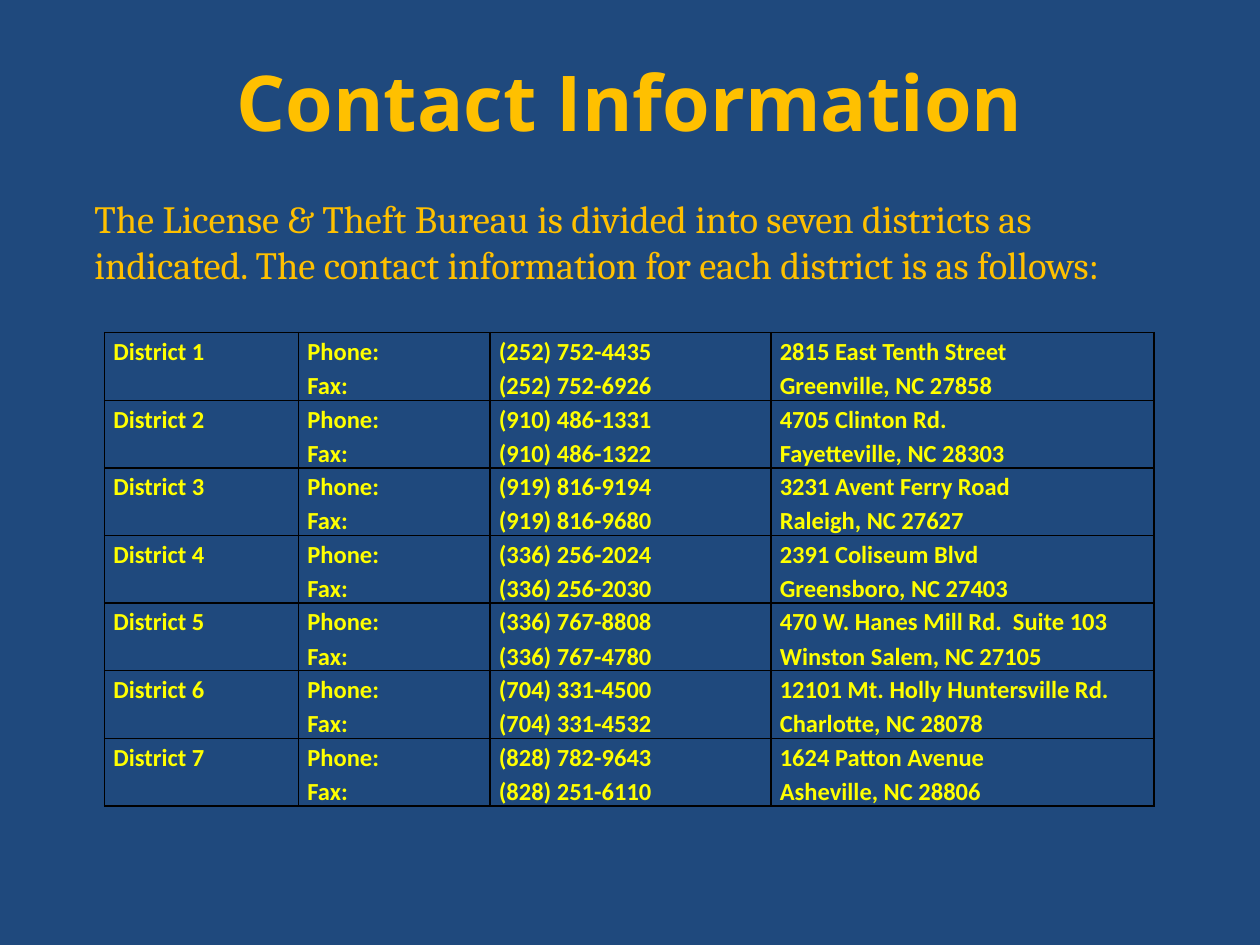
from lxml.etree import SubElement as Sub
from pptx import Presentation as Deck
from pptx.dml.color import RGBColor as Rgb
from pptx.enum.text import MSO_ANCHOR as Anchor, PP_ALIGN as Align
from pptx.oxml.ns import qn
from pptx.util import Inches, Pt

WIDE, HIGH = Inches(10), Inches(7.5)
NAVY, GOLD, LEMON, BLACK = "1F497D", "FFC000", "FFFF00", "000000"
COLS = (1.54, 1.52, 2.23, 3.04)
ROWS = (
    ("(252) 752-4435", "(252) 752-6926", "2815 East Tenth Street", "Greenville, NC 27858"),
    ("(910) 486-1331", "(910) 486-1322", "4705 Clinton Rd.", "Fayetteville, NC 28303"),
    ("(919) 816-9194", "(919) 816-9680", "3231 Avent Ferry Road", "Raleigh, NC 27627"),
    ("(336) 256-2024", "(336) 256-2030", "2391 Coliseum Blvd", "Greensboro, NC 27403"),
    ("(336) 767-8808", "(336) 767-4780", "470 W. Hanes Mill Rd.  Suite 103",
     "Winston Salem, NC 27105"),
    ("(704) 331-4500", "(704) 331-4532",
     "12101 Mt. Holly Huntersville Rd. Charlotte, NC 28078"),
    ("(828) 782-9643", "(828) 251-6110", "1624 Patton Avenue", "Asheville, NC 28806"),
)


def paint(part, hue):
    """Give a fill or a font colour a hex colour."""
    part.rgb = Rgb.from_string(hue)


def write(para, text, face, size, hue, bold=False):
    """Add one styled run to a paragraph."""
    run = para.add_run()
    run.text = text
    run.font.name, run.font.size, run.font.bold = face, Pt(size), bold
    paint(run.font.color, hue)


def scale(box):
    """Turn shares of the slide into lengths."""
    return [int(part * side) for part, side in zip(box, (WIDE, HIGH) * 2)]


def frame(slide, box):
    """Place a wrapping text box and return its text frame."""
    text = slide.shapes.add_textbox(*scale(box)).text_frame
    text.word_wrap = True
    return text


def head(slide, box):
    """Place the centred title."""
    text = frame(slide, box)
    text.vertical_anchor = Anchor.MIDDLE
    para = text.paragraphs[0]
    para.alignment = Align.CENTER
    write(para, "Contact Information", "Open Sans", 44, GOLD, True)


def intro(slide, box):
    """Place the opening sentence."""
    text = frame(slide, box)
    text.margin_left = Inches(0.25)
    write(text.paragraphs[0], "The License & Theft Bureau is divided into seven districts "
          "as indicated. The contact information for each district is as follows:",
          "Cambria", 22, GOLD)


def edge(cell):
    """Draw thin black lines round a cell."""
    props = cell._tc.get_or_add_tcPr()
    for tag in ("a:lnL", "a:lnR", "a:lnT", "a:lnB"):
        line = Sub(props, qn(tag), w=str(Pt(1)))
        Sub(Sub(line, qn("a:solidFill")), qn("a:srgbClr"), val=BLACK)


def fill(cell, lines):
    """Write a cell's lines, one paragraph each."""
    edge(cell)
    cell.fill.background()
    cell.margin_left = cell.margin_right = Inches(0.07)
    cell.margin_top = cell.margin_bottom = 0
    text = cell.text_frame
    for num, line in enumerate(lines):
        para = text.add_paragraph() if num else text.paragraphs[0]
        para.line_spacing = 1.15
        write(para, line, "Calibri", 14, LEMON, True)


def chart(slide, box):
    """Place the table of districts."""
    grid = slide.shapes.add_table(len(ROWS), len(COLS), *scale(box)).table
    grid.first_row = grid.horz_banding = False
    for col, width in zip(grid.columns, COLS):
        col.width = Inches(width)
    for num, row in enumerate(ROWS):
        cells = ([f"District {num + 1}"], ("Phone:", "Fax:"), row[:2], row[2:])
        for col, lines in enumerate(cells):
            fill(grid.cell(num, col), lines)


def main():
    """Build and save the slide."""
    deck = Deck()
    deck.slide_width, deck.slide_height = WIDE, HIGH
    slide = deck.slides.add_slide(deck.slide_layouts[6])
    slide.background.fill.solid()
    paint(slide.background.fill.fore_color, NAVY)
    head(slide, (0.025, 0.023, 0.95, 0.167))
    intro(slide, (0.05, 0.2, 0.9, 0.79))
    chart(slide, (0.083, 0.352, 0.833, 0.487))
    deck.save("out.pptx")


if __name__ == "__main__":
    main()
